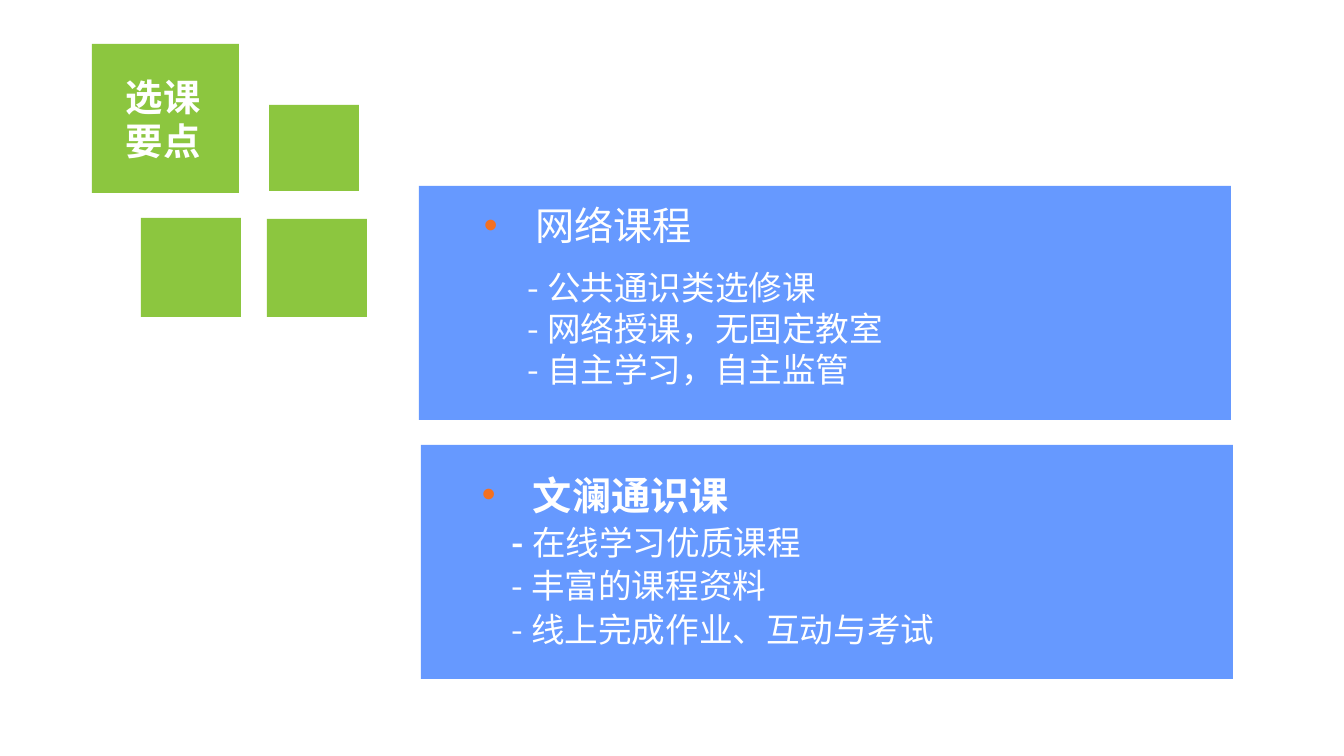
from lxml import etree
from pptx import Presentation
from pptx import util as u
from pptx.dml.color import RGBColor
from pptx.enum import shapes
from pptx.oxml.ns import qn

PX = 914400 / 134.4
GREEN, BLUE, WHITE, ORANGE = "8CC63F", "6699FF", "FFFFFF", "F37021"
SANS = "Noto Sans CJK SC"

SQUARES = [(92, 44, 147, 149), (269, 105, 90, 86), (141, 218, 100, 99), (267, 219, 100, 98)]
PANELS = [(419, 186, 812, 234), (421, 445, 812, 234)]

# Each line: runs of (text, bold), size, line pitch, space before, indent, bulleted
TITLE = [([(t, True)], 20, 23.5, 0, 0, False) for t in ("选课", "要点")]
ONLINE_HEAD = [([("网络课程", False)], 21, 18, 0, 51, True)]
ONLINE_ITEMS = [([("- " + t, False)], 18, 22, 0, 31, False)
                for t in ("公共通识类选修课", "网络授课，无固定教室", "自主学习，自主监管")]
GENERAL = [([("文澜通识课", True)], 21, 23, 0, 51, True),
           ([("- ", True), ("在线学习优质课程", False)], 18, 20, 3.5, 30, False)]
GENERAL += [([("- " + t, False)], 18, 20, 3.5, 30, False)
            for t in ("丰富的课程资料", "线上完成作业、互动与考试")]

TEXTS = [((126, 75, 97, 90), "Arial", TITLE),
         ((484, 215, 740, 40), SANS, ONLINE_HEAD),
         ((497, 266, 420, 124), SANS, ONLINE_ITEMS),
         ((482, 475, 740, 175), SANS, GENERAL)]


def px(n):
    return u.Emu(round(n * PX))


def color(value):
    return RGBColor.from_string(value)


def add_block(s, box, fill):
    sp = s.shapes.add_shape(shapes.MSO_SHAPE.RECTANGLE, *map(px, box))
    sp.shadow.inherit = False
    sp.fill.solid()
    sp.fill.fore_color.rgb = color(fill)
    sp.line.fill.background()


def add_bullet(pPr):
    clr = etree.SubElement(pPr, qn("a:buClr"))
    etree.SubElement(clr, qn("a:srgbClr"), val=ORANGE)
    etree.SubElement(pPr, qn("a:buFont"), typeface="Arial")
    etree.SubElement(pPr, qn("a:buChar"), char="•")


def add_text(s, box, font, lines):
    tf = s.shapes.add_textbox(*map(px, box)).text_frame
    tf.word_wrap = True
    tf.margin_left = tf.margin_right = tf.margin_top = tf.margin_bottom = 0
    for i, (runs, size, pitch, before, indent, bulleted) in enumerate(lines):
        p = tf.add_paragraph() if i else tf.paragraphs[0]
        p.line_spacing, p.space_before = u.Pt(pitch), u.Pt(before)
        pPr = p._p.get_or_add_pPr()
        pPr.set("marL", str(px(indent)))
        pPr.set("indent", str(-px(indent) if bulleted else 0))
        if bulleted:
            add_bullet(pPr)
        for words, bold in runs:
            r = p.add_run()
            r.text = words
            r.font.name, r.font.size, r.font.bold = font, u.Pt(size), bold
            r.font.color.rgb = color(WHITE)
            etree.SubElement(r._r.get_or_add_rPr(), qn("a:ea"), typeface=SANS)


def main():
    """Build the course selection slide."""
    prs = Presentation()
    prs.slide_width, prs.slide_height = px(1344), px(756)
    s = prs.slides.add_slide(prs.slide_layouts[6])
    for boxes, fill in ((SQUARES, GREEN), (PANELS, BLUE)):
        for box in boxes:
            add_block(s, box, fill)
    for box, font, lines in TEXTS:
        add_text(s, box, font, lines)
    prs.save("out.pptx")


if __name__ == "__main__":
    main()
